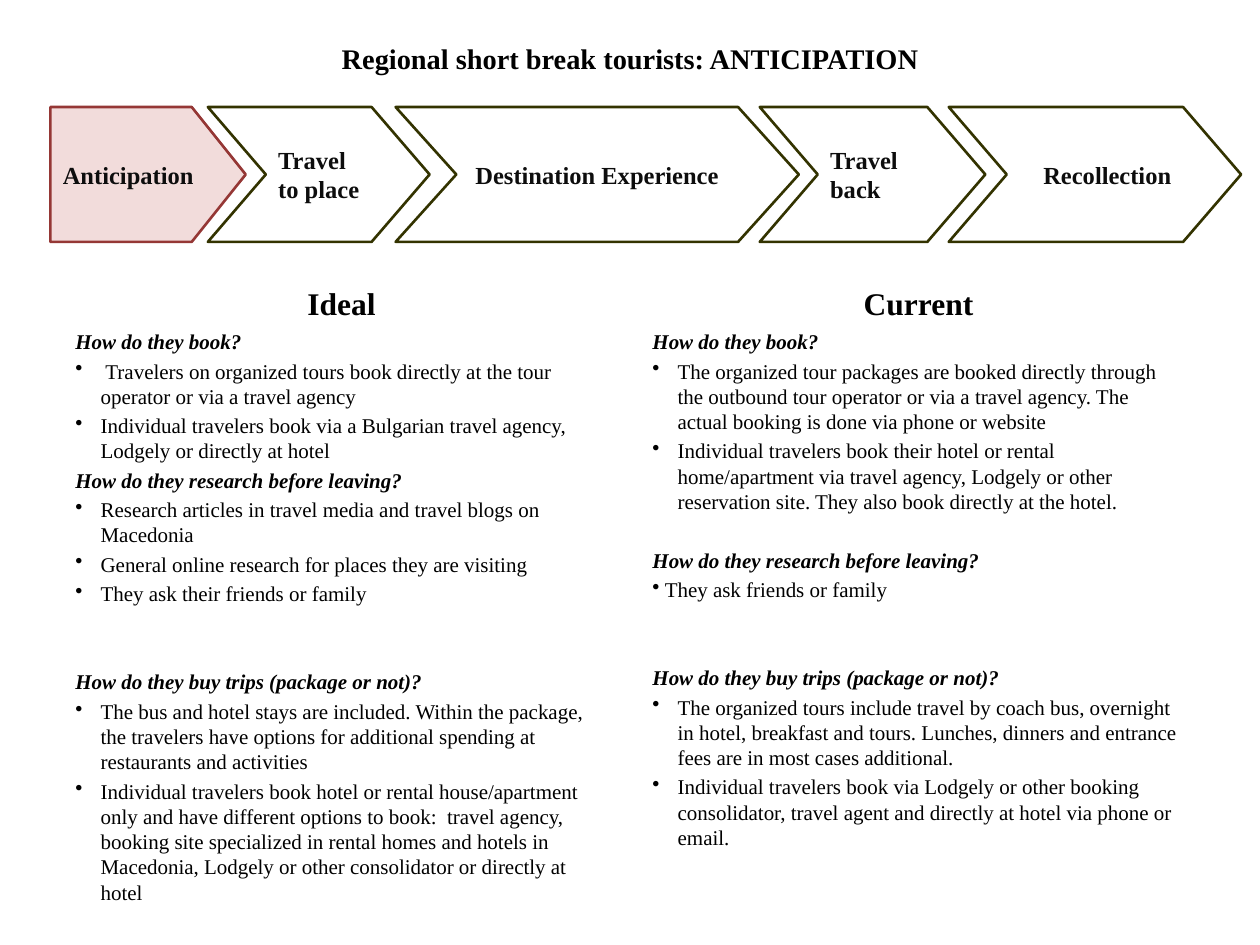
"""Build the trip stage slide on how regional short break tourists plan."""
import pptx
import pptx.util
import pptx.dml.color
import pptx.enum.shapes
import pptx.enum.text
import pptx.oxml.ns
import lxml.etree

Inches, Pt = pptx.util.Inches, pptx.util.Pt
Kind = pptx.enum.shapes.MSO_SHAPE
Align = pptx.enum.text.PP_ALIGN
Anchor = pptx.enum.text.MSO_ANCHOR

HUES = {"ink": "000000", "dark": "0D0D0D", "rose": "F2DCDB",
        "wine": "953735", "white": "FFFFFF", "olive": "333300"}
FONT = "Times New Roman"
TITLE = "Regional short break tourists: ANTICIPATION"

STAGES = [
    dict(text="Anticipation", left=0.4, width=1.55, bend=0.4,
         kind=Kind.PENTAGON, fill="rose", line="wine"),
    dict(text="Travel to place", left=1.65, width=1.76),
    dict(text="Destination Experience", left=3.14, width=3.2, bend=0.45,
         align=Align.CENTER, right=0.1),
    dict(text="Travel back", left=6.03, width=1.79),
    dict(text="Recollection", left=7.53, width=2.32, inset=0.29),
]

BOOK = "How do they book?"
SEEK = "How do they research before leaving?"
BUY = "How do they buy trips (package or not)?"

COLUMNS = [
    ("Ideal", 0.5, [
        (BOOK, 0, [
            " Travelers on organized tours book directly at the tour operator or via a travel agency",
            "Individual travelers book via a Bulgarian travel agency, Lodgely or directly at hotel"]),
        (SEEK, 0, [
            "Research articles in travel media and travel blogs on Macedonia",
            "General online research for places they are visiting",
            "They ask their friends or family"]),
        (BUY, 2, [
            "The bus and hotel stays are included. Within the package, the travelers have options for additional spending at restaurants and activities",
            "Individual travelers book hotel or rental house/apartment only and have different options to book:  travel agency, booking site specialized in rental homes and hotels in Macedonia, Lodgely or other consolidator or directly at hotel"]),
    ]),
    ("Current", 5.08, [
        (BOOK, 0, [
            "The organized tour packages are booked directly through the outbound tour operator or via a travel agency. The actual booking is done via phone or website",
            "Individual travelers book their hotel or rental home/apartment via travel agency, Lodgely or other reservation site. They also book directly at the hotel."]),
        (SEEK, 1, [" They ask friends or family"]),
        (BUY, 2, [
            "The organized tours include travel by coach bus, overnight in hotel, breakfast and tours. Lunches, dinners and entrance fees are in most cases additional.",
            "Individual travelers book via Lodgely or other booking consolidator, travel agent and directly at hotel via phone or email."]),
    ]),
]
FLUSH = " They ask friends or family"
GAP, BLANK = 2.4, 16.8


def hue(name):
    return pptx.dml.color.RGBColor.from_string(HUES[name])


def write(frame, text, size=12, bold=False, slant=False, color="ink",
          align=Align.LEFT, above=0, bullet=False, hang=0):
    first = frame.paragraphs[0]
    para = frame.add_paragraph() if first.runs else first
    para.alignment = align
    para.space_before = Pt(above)
    run = para.add_run()
    run.text = text
    font = run.font
    font.name, font.size, font.bold, font.italic = FONT, Pt(size), bold, slant
    font.color.rgb = hue(color)
    if bullet:
        props = para._p.get_or_add_pPr()
        props.set("marL", str(Inches(hang)))
        props.set("indent", str(-Inches(hang)))
        mark = lxml.etree.SubElement(props, pptx.oxml.ns.qn("a:buChar"))
        mark.set("char", "•")


def box(slide, left, top, width, height, anchor=Anchor.TOP):
    frame = slide.shapes.add_textbox(
        Inches(left), Inches(top), Inches(width), Inches(height)).text_frame
    frame.word_wrap = True
    frame.vertical_anchor = anchor
    return frame


def stage(slide, text, left, width, bend=0.43, kind=Kind.CHEVRON,
          fill="white", line="olive", align=Align.LEFT, inset=0.1, right=0.05):
    shape = slide.shapes.add_shape(
        kind, Inches(left), Inches(0.85), Inches(width), Inches(1.07))
    shape.adjustments[0] = bend
    shape.shadow.inherit = False
    shape.fill.solid()
    shape.fill.fore_color.rgb = hue(fill)
    shape.line.color.rgb = hue(line)
    shape.line.width = Pt(1.5)
    frame = shape.text_frame
    frame.word_wrap = True
    frame.vertical_anchor = Anchor.MIDDLE
    frame.margin_left, frame.margin_right = Inches(inset), Inches(right)
    write(frame, text, size=14, bold=True, color="dark", align=align)


def column(slide, head, left, topics):
    write(box(slide, left, 2.1, 4.42, 0.5, Anchor.BOTTOM), head,
          size=18, bold=True, align=Align.CENTER)
    frame = box(slide, left, 2.56, 4.42, 4.76)
    for place, (ask, blanks, points) in enumerate(topics):
        above = GAP + blanks * BLANK if place else 0
        write(frame, ask, bold=True, slant=True, above=above)
        for point in points:
            write(frame, point, above=GAP, bullet=True,
                  hang=0 if point == FLUSH else 0.2)


def main():
    deck = pptx.Presentation()
    deck.slide_width, deck.slide_height = Inches(10), Inches(7.5)
    slide = deck.slides.add_slide(deck.slide_layouts[6])
    write(box(slide, 0.5, 0.3, 9, 0.33, Anchor.MIDDLE), TITLE,
          size=16.2, bold=True, align=Align.CENTER)
    for head, left, topics in COLUMNS:
        column(slide, head, left, topics)
    for part in STAGES:
        stage(slide, **part)
    deck.save("out.pptx")


if __name__ == "__main__":
    main()
